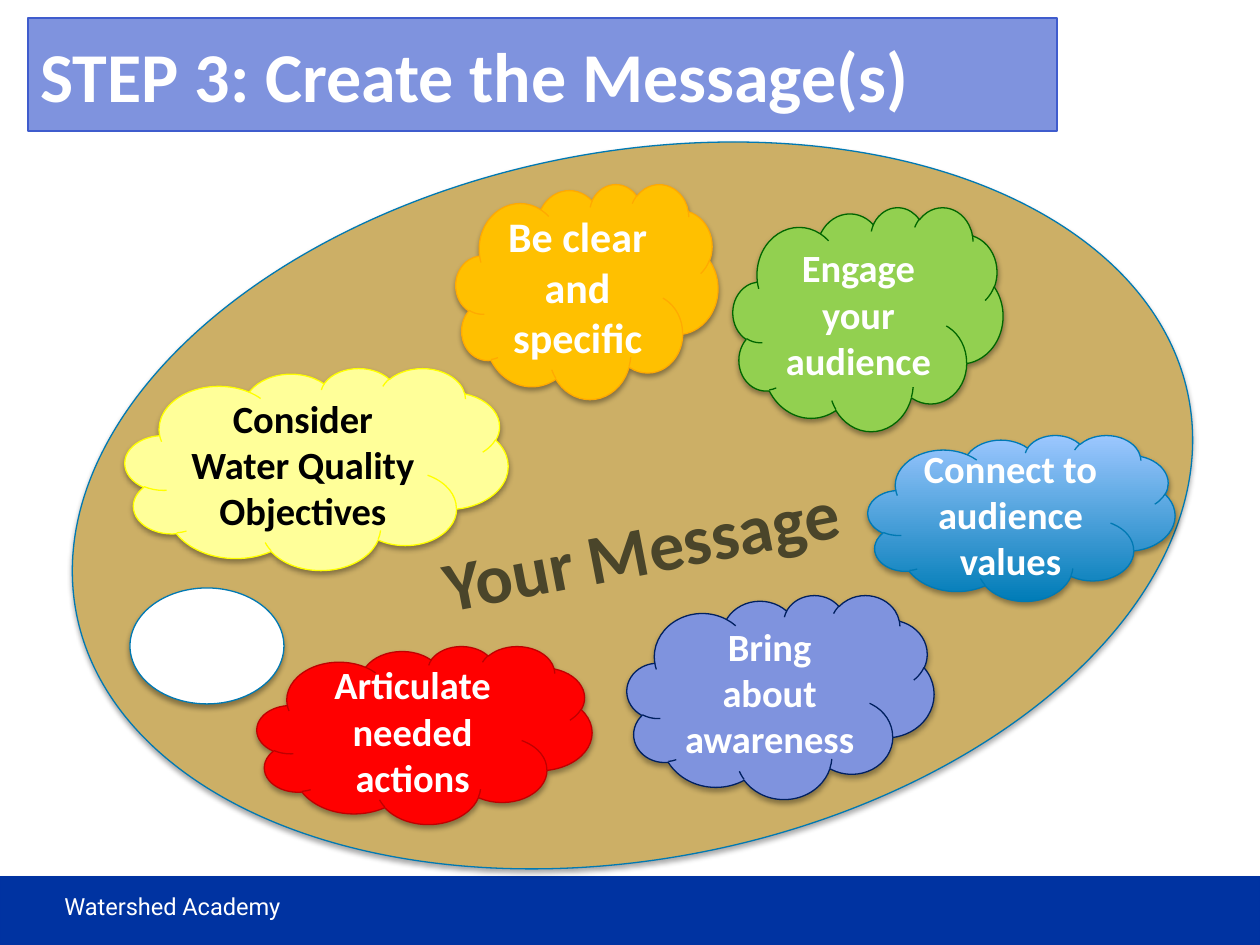
from lxml.etree import SubElement
from pptx import Presentation
from pptx.dml.color import RGBColor
from pptx.enum.shapes import MSO_SHAPE
from pptx.enum.text import MSO_ANCHOR, MSO_AUTO_SIZE, PP_ALIGN
from pptx.oxml.ns import qn
from pptx.util import Emu, Pt

HUES = {
    "white": "FFFFFF", "black": "000000", "navy": "0033A1", "rim": "0032A1",
    "sand": "CCAF66", "teal": "0079B3", "earth": "4A452A",
    "deep": "007CB7", "sky": "9CC7FF", "green": "92D050", "pine": "006600",
    "iris": "7F93DE", "dusk": "002060", "edge": "3F5CCD",
    "red": "FF0000", "wine": "C00000", "cream": "FFFF99", "lemon": "FFFF00",
    "gold": "FFC000", "amber": "FFAA01",
}

CLOUDS = [
    ((868, 435, 307, 166), ("deep", "sky"), "teal", "Connect to audience values", {}),
    ((733, 207, 270, 224), "green", "pine", "Engage your audience", {}),
    ((627, 595, 307, 204), "iris", "dusk", "Bring about awareness", {}),
    ((257, 646, 335, 178), "red", "wine", "Articulate needed actions", {}),
    ((125, 368, 383, 202), "cream", "lemon", "Consider Water Quality Objectives",
     {"hue": "black"}),
    ((456, 184, 262, 215), "gold", "amber", "Be clear and specific", {"size": 24}),
]


def px(num):
    return Emu(round(num * 914400 / 126))


def color(name):
    return RGBColor.from_string(HUES[name])


def apply(item, vals):
    for key, val in vals.items():
        setattr(item, key, val)


class Deck:
    face = "Calibri"
    size = 22

    def __init__(self, wide, high):
        self.show = Presentation()
        apply(self.show, {"slide_width": px(wide), "slide_height": px(high)})
        self.slide = self.show.slides.add_slide(self.show.slide_layouts[5])

    def place(self, shape, box):
        names = ("left", "top", "width", "height")
        apply(shape, dict(zip(names, map(px, box))))

    def paint(self, shape, fill, line):
        if isinstance(fill, tuple):
            shape.fill.gradient()
            shape.fill.gradient_angle = 90
            for stop, name in zip(shape.fill.gradient_stops, fill):
                stop.color.rgb = color(name)
        else:
            shape.fill.solid()
            shape.fill.fore_color.rgb = color(fill)
        shape.line.color.rgb = color(line)
        shape.line.width = Pt(0.75)

    def shade(self, shape):
        shape.shadow.inherit = False
        list_el = shape._element.spPr.find(qn("a:effectLst"))
        cast = SubElement(list_el, qn("a:outerShdw"), blurRad=str(Pt(3.1)),
                          dist=str(Pt(1.8)), dir="5400000", rotWithShape="0")
        tone = SubElement(cast, qn("a:srgbClr"), val=HUES["black"])
        SubElement(tone, qn("a:alpha"), val="35000")

    def letter(self, shape, text, size=None, hue="white", face=None, bold=True,
               align=PP_ALIGN.CENTER, anchor=MSO_ANCHOR.MIDDLE, drop=6):
        frame = shape.text_frame
        apply(frame, {
            "text": text, "word_wrap": True, "auto_size": MSO_AUTO_SIZE.NONE,
            "vertical_anchor": anchor, "margin_top": px(drop),
        })
        para = frame.paragraphs[0]
        para.alignment = align
        apply(para.font, {"name": face or self.face, "bold": bold,
                          "size": Pt(size or self.size)})
        para.font.color.rgb = color(hue)

    def title(self, box, text, fill, line):
        shape = self.slide.shapes.title
        self.place(shape, box)
        self.paint(shape, fill, line)
        self.letter(shape, text, size=40, align=PP_ALIGN.LEFT)

    def form(self, kind, box, fill, line, text="", turn=0, **style):
        shape = self.slide.shapes.add_shape(kind, *map(px, box))
        shape.rotation = turn
        self.paint(shape, fill, line)
        self.shade(shape)
        if text:
            self.letter(shape, text, **style)

    def label(self, box, text, **style):
        shape = self.slide.shapes.add_textbox(*map(px, box))
        self.letter(shape, text, **style)


def main():
    deck = Deck(1260, 945)
    deck.form(MSO_SHAPE.RECTANGLE, (0, 877, 1260, 67), "navy", "rim")
    deck.label((52, 886, 423, 42), "Watershed Academy", size=13.5, face="Roboto",
               bold=False, align=PP_ALIGN.LEFT, anchor=MSO_ANCHOR.TOP)
    deck.form(MSO_SHAPE.OVAL, (66, 152, 1133, 707), "sand", "teal", "Your Message",
              turn=349, size=40, hue="earth", drop=91)
    deck.form(MSO_SHAPE.OVAL, (130, 588, 154, 116), "white", "teal")
    for box, fill, line, text, style in CLOUDS:
        deck.form(MSO_SHAPE.CLOUD, box, fill, line, text, **style)
    deck.title((28, 18, 1029, 113), "STEP 3: Create the Message(s)", "iris", "edge")
    deck.show.save("out.pptx")


if __name__ == "__main__":
    main()
